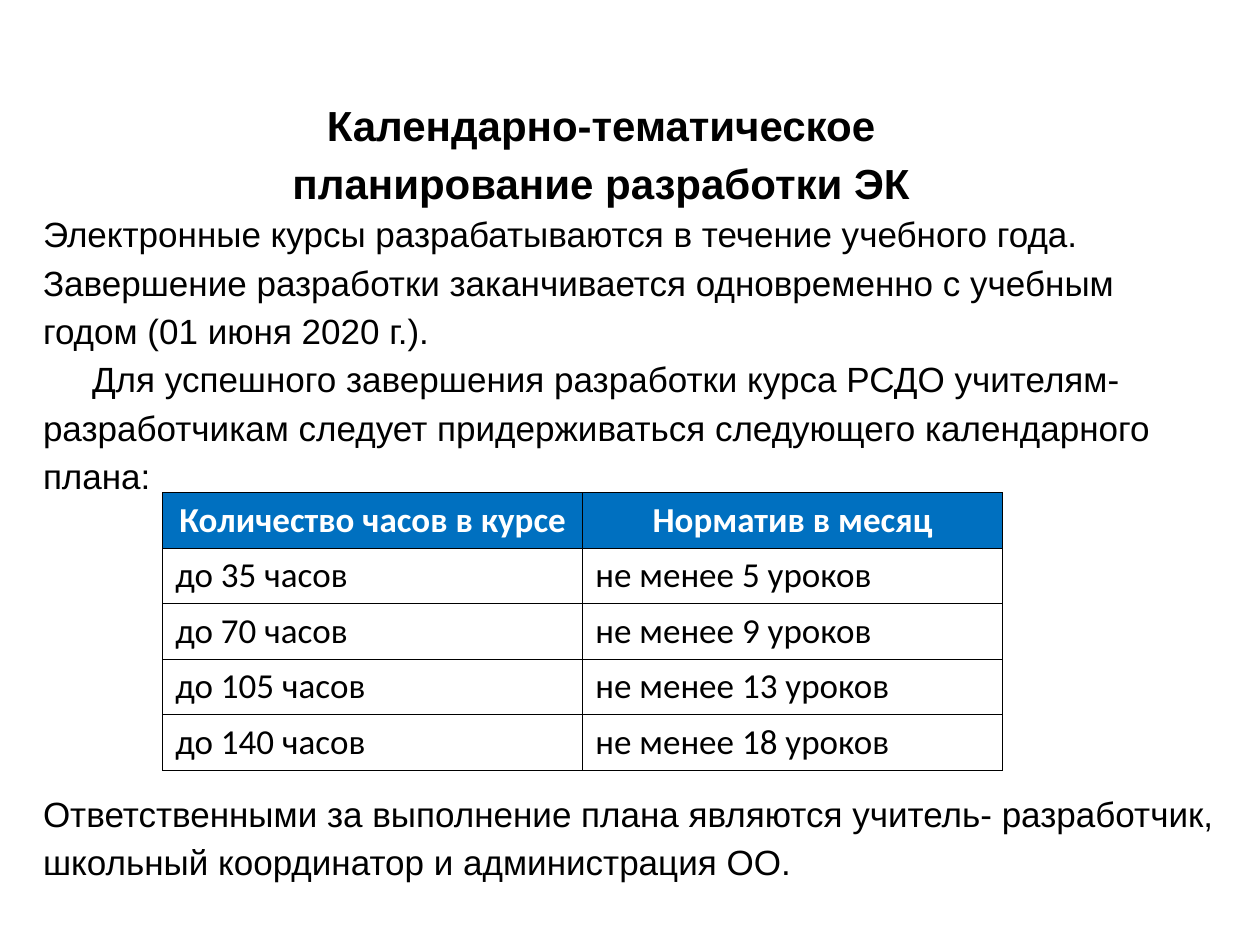
from lxml.etree import SubElement
from pptx import Presentation
from pptx.dml.color import RGBColor
from pptx.enum.text import MSO_ANCHOR, MSO_AUTO_SIZE, PP_ALIGN
from pptx.oxml.ns import qn
from pptx.util import Pt

COLORS = {"text": "000000", "header_text": "FFFFFF", "header": "0070C0",
          "cell": "FFFFFF", "border": "000000"}
LINE_SPACING = 1.15
TABLE_GAP = 165.6  # room left in the text for the table

TITLE = "Календарно-тематическое планирование разработки ЭК"
# text, first-line indent, space before
PARAGRAPHS = [
    ("Электронные курсы разрабатываются в течение учебного года. Завершение "
     "разработки заканчивается одновременно с учебным годом (01 июня 2020 г.).", 0, 0),
    ("Для успешного завершения разработки курса РСДО учителям-разработчикам "
     "следует придерживаться следующего календарного плана:", 28, 0),
    ("Ответственными за выполнение плана являются учитель- разработчик, "
     "школьный координатор и администрация ОО.", 0, TABLE_GAP),
]
ROWS = [
    ("Количество часов в курсе", "Норматив в месяц"),
    ("до 35 часов", "не менее 5 уроков"),
    ("до 70 часов", "не менее 9 уроков"),
    ("до 105 часов", "не менее 13 уроков"),
    ("до 140 часов", "не менее 18 уроков"),
]


def rgb(name):
    return RGBColor.from_string(COLORS[name])


def format_runs(p, size, font="Arial", color="text", bold=False):
    for r in p.runs:
        r.font.size = Pt(size)
        r.font.name = font
        r.font.bold = bold
        r.font.color.rgb = rgb(color)


def add_title(s, left, top, width, height):
    sp = s.shapes.title
    sp.left, sp.top, sp.width, sp.height = Pt(left), Pt(top), Pt(width), Pt(height)
    tf = sp.text_frame
    tf.text = TITLE
    tf.word_wrap = True
    tf.auto_size = MSO_AUTO_SIZE.NONE
    tf.vertical_anchor = MSO_ANCHOR.MIDDLE
    p = tf.paragraphs[0]
    p.alignment = PP_ALIGN.CENTER
    p.line_spacing = LINE_SPACING
    format_runs(p, 24, bold=True)


def add_body(s, left, top, width, height):
    tf = s.shapes.add_textbox(Pt(left), Pt(top), Pt(width), Pt(height)).text_frame
    tf.word_wrap = True
    for i, (text, indent, before) in enumerate(PARAGRAPHS):
        p = tf.add_paragraph() if i else tf.paragraphs[0]
        p.text = text
        p.line_spacing = LINE_SPACING
        p.space_before = Pt(before)
        if indent:
            pPr = p._p.get_or_add_pPr()
            pPr.set("marL", "0")
            pPr.set("indent", str(Pt(indent)))
        format_runs(p, 20)


def set_borders(cell, widths):
    tcPr = cell._tc.get_or_add_tcPr()
    for side, width in widths.items():
        ln = SubElement(tcPr, qn(f"a:ln{side}"), w=str(Pt(width)))
        fill = SubElement(ln, qn("a:solidFill"))
        SubElement(fill, qn("a:srgbClr"), val=COLORS["border"])


def add_plan_table(s, left, top, width, height):
    n_rows, n_cols = len(ROWS), len(ROWS[0])
    table = s.shapes.add_table(n_rows, n_cols, Pt(left), Pt(top),
                               Pt(width), Pt(height)).table
    for i, row in enumerate(ROWS):
        header = i == 0
        for j, text in enumerate(row):
            cell = table.cell(i, j)
            # The inner vertical line is thicker than the rest
            set_borders(cell, {"L": 1 if j > 0 else 0.5,
                               "R": 1 if j < n_cols - 1 else 0.5,
                               "T": 0.5, "B": 0.5})
            cell.fill.solid()
            cell.fill.fore_color.rgb = rgb("header" if header else "cell")
            cell.text = text
            p = cell.text_frame.paragraphs[0]
            p.alignment = PP_ALIGN.CENTER if header else PP_ALIGN.LEFT
            format_runs(p, 20, "Calibri", "header_text" if header else "text", header)


def main():
    prs = Presentation()
    prs.slide_width, prs.slide_height = Pt(720), Pt(540)
    s = prs.slides.add_slide(prs.slide_layouts[5])
    add_title(s, 106.5, 46, 474, 79)
    add_body(s, 17.5, 114.5, 686, 425.5)
    add_plan_table(s, 93, 281.5, 480, 158.5)
    prs.save("out.pptx")


if __name__ == "__main__":
    main()
